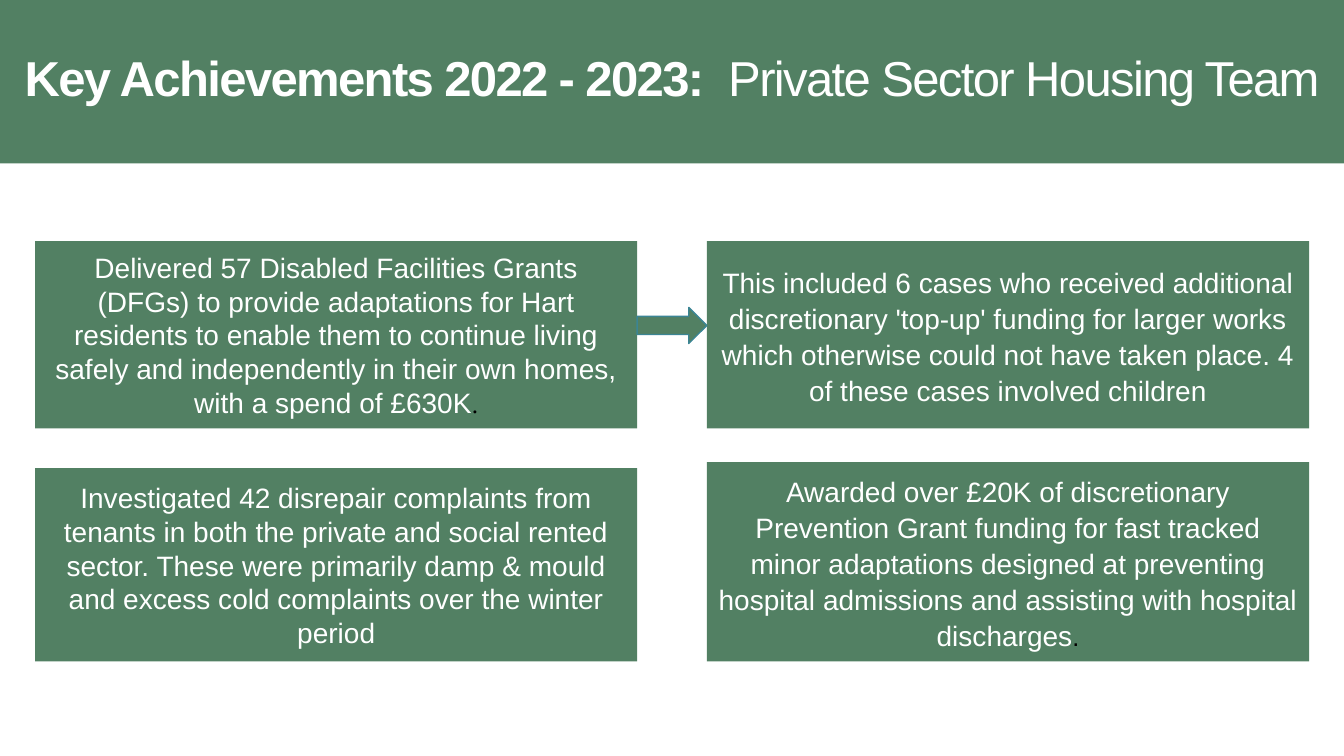
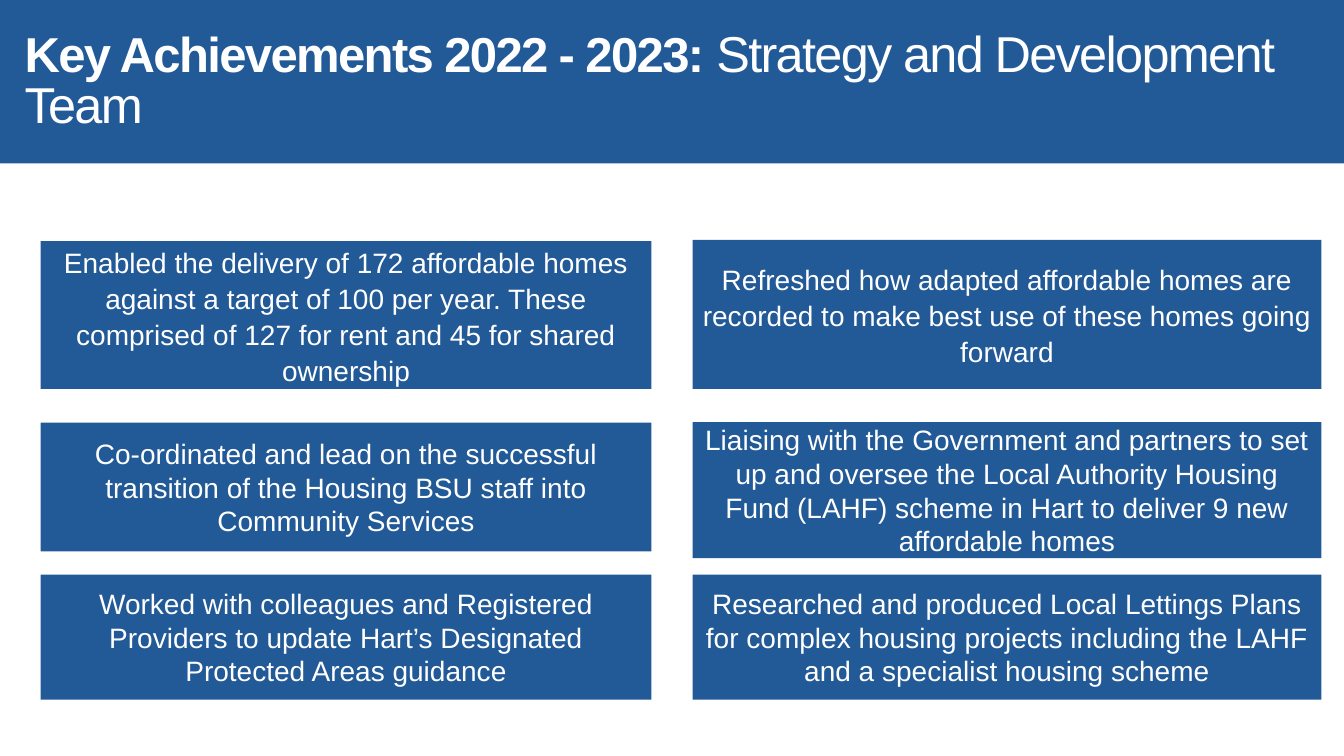
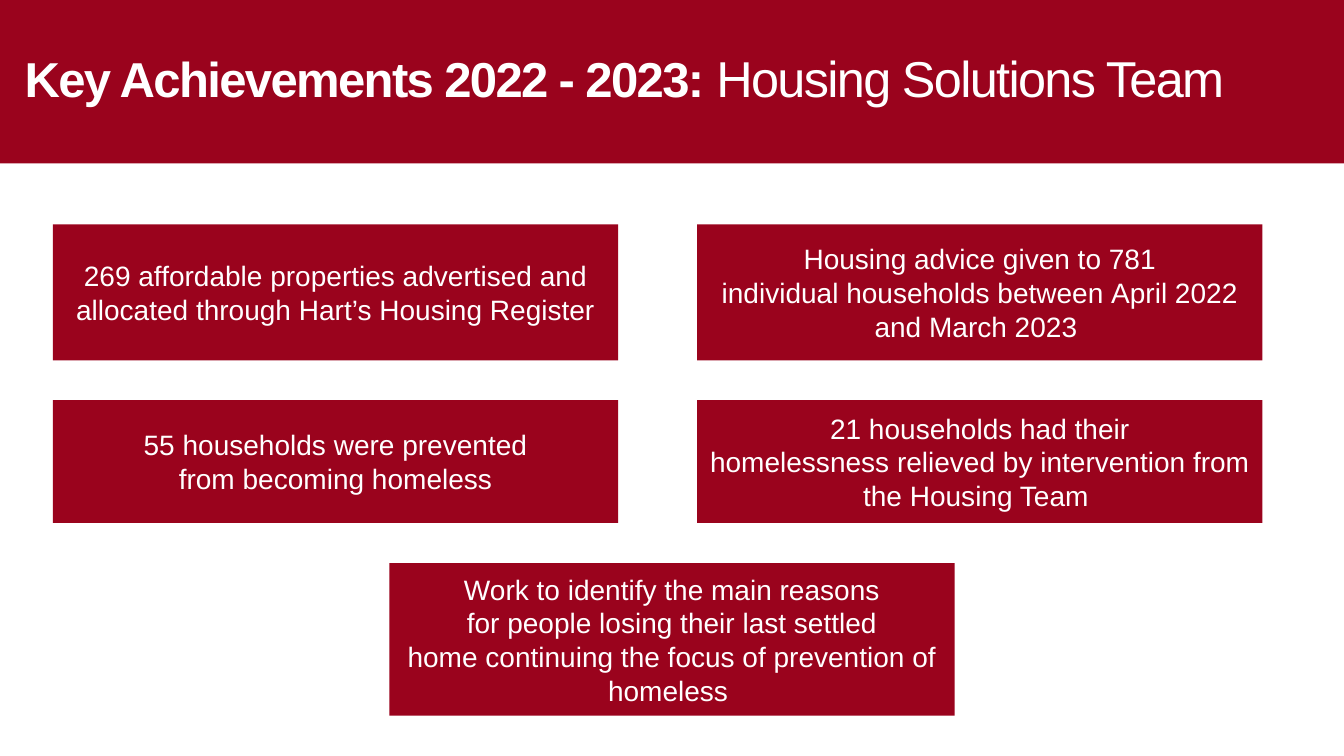
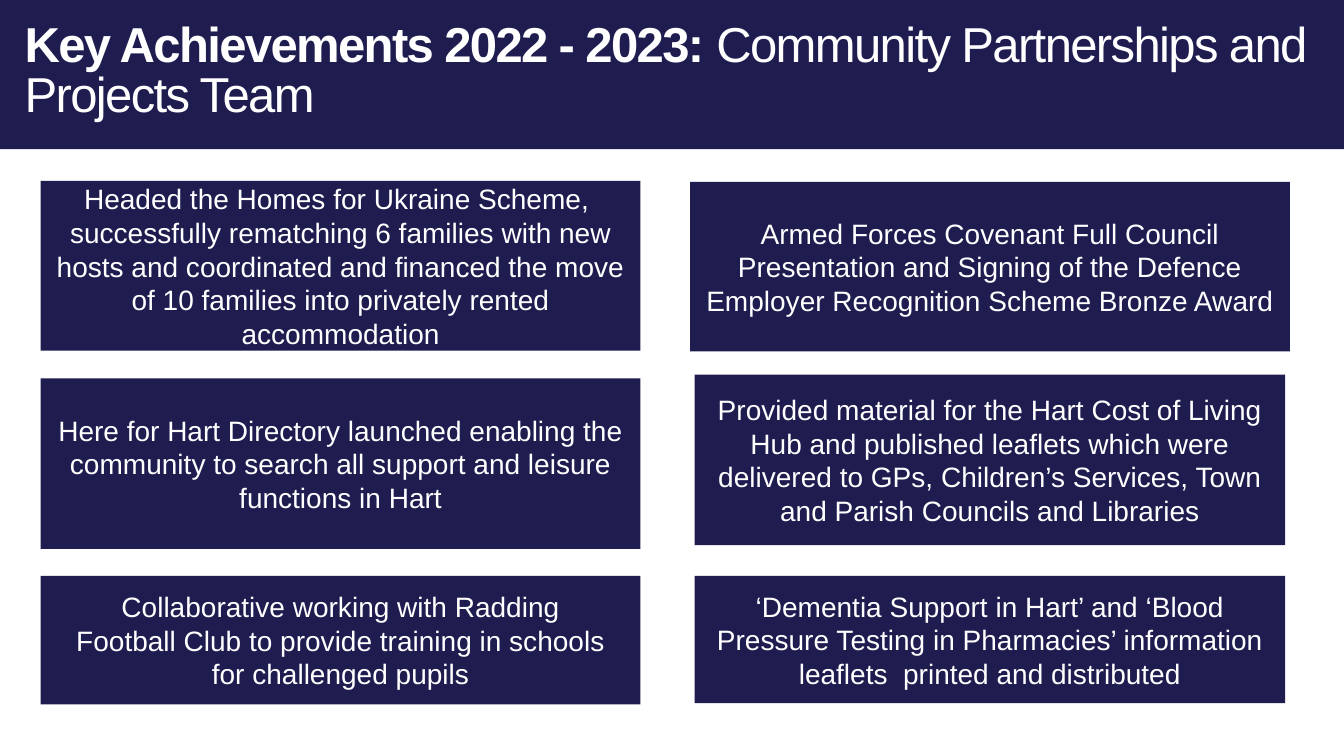
from dataclasses import dataclass

from pptx import Presentation
from pptx.dml.color import RGBColor
from pptx.enum.shapes import MSO_SHAPE
from pptx.enum.text import MSO_ANCHOR, PP_ALIGN
from pptx.util import Inches, Pt

RECTANGLE = MSO_SHAPE.RECTANGLE
RIGHT_ARROW = MSO_SHAPE.RIGHT_ARROW
MIDDLE = MSO_ANCHOR.MIDDLE
LEFT = PP_ALIGN.LEFT
CENTER = PP_ALIGN.CENTER

TIE = "~"
FIXED_SPACE = chr(160)


@dataclass(frozen=True)
class Theme:
    width: int = Inches(13.33)
    height: int = Inches(7.5)
    columns: int = 160
    rows: int = 90
    font: str = "Arial"
    serif: str = "Times New Roman"
    white: str = "FFFFFF"
    black: str = "000000"
    green: str = "528063"
    blue: str = "225997"
    red: str = "9A031D"
    navy: str = "1F1D50"
    teal: str = "3B8594"
    title_size: int = 35
    team_size: int = 36
    card_size: int = 20
    stop_size: int = 18
    title_tracking: int = -120
    title_leading: float = 0.85
    loose_leading: float = 1.07
    loose_after: int = 8


THEME = Theme()


@dataclass(frozen=True)
class Box:
    left: float
    top: float
    width: float
    height: float

    def place(self):
        column = THEME.width / THEME.columns
        row = THEME.height / THEME.rows
        return (round(self.left * column), round(self.top * row),
                round(self.width * column), round(self.height * row))


@dataclass(frozen=True)
class Card:
    top: float
    height: float
    text: str
    loose: bool = False
    stop_font: str = ""
    inset: float = 0.1


@dataclass(frozen=True)
class Column:
    left: float
    width: float
    cards: tuple


@dataclass(frozen=True)
class TeamSlide:
    color: str
    band_height: float
    title_height: float
    heading: str
    team: str
    team_size: int
    columns: tuple
    arrow: Box = None


HEADING = "Key Achievements 2022 - 2023: "

TEAM_SLIDES = (
    TeamSlide(
        THEME.green, 19.45, 17.3, HEADING + " ", "Private Sector Housing Team",
        THEME.title_size,
        (
            Column(4.2, 71.65, (
                Card(28.7, 22.3, "Delivered 57 Disabled Facilities Grants (DFGs) to provide "
                     "adaptations for Hart residents to enable them to continue living safely "
                     "and independently in their own homes, with a spend of £630K",
                     stop_font=THEME.serif),
                Card(55.75, 23, "Investigated 42 disrepair complaints from tenants in both the "
                     "private and social rented sector. These were primarily damp & mould and "
                     "excess cold complaints over the winter period"),
            )),
            Column(84.15, 71.7, (
                Card(28.7, 22.3, "This included 6 cases who received additional discretionary "
                     "'top-up' funding for larger works which otherwise could not have taken "
                     "place. 4 of these cases involved children", loose=True),
                Card(55, 23.75, "Awarded over £20K of discretionary Prevention Grant funding for "
                     "fast tracked minor adaptations designed at preventing hospital admissions "
                     "and assisting with hospital discharges", loose=True, stop_font=THEME.font),
            )),
        ),
        Box(75.85, 36.6, 8.3, 4.3),
    ),
    TeamSlide(
        THEME.blue, 19.45, 17.4, HEADING, "Strategy and Development Team", THEME.team_size,
        (
            Column(4.85, 72.7, (
                Card(28.7, 17.6, "Enabled the delivery of 172 affordable homes against a target "
                     "of 100 per year. These comprised of 127 for rent and 45 for shared "
                     "ownership", loose=True),
                Card(50.3, 15.35, "Co-ordinated and lead on the successful transition of the "
                     "Housing BSU staff into Community Services"),
                Card(68.4, 14.9, "Worked with colleagues and Registered Providers to update "
                     "Hart’s Designated Protected Areas guidance"),
            )),
            Column(82.45, 74.85, (
                Card(28.55, 17.75, "Refreshed how adapted affordable homes are recorded to make "
                     "best use of these homes going forward", loose=True),
                Card(50.25, 16.2, "Liaising with the Government and partners to set up and "
                     "oversee the Local Authority Housing Fund (LAHF) scheme in Hart to deliver "
                     "9 new affordable homes"),
                Card(68.4, 14.9, "Researched and produced Local Lettings Plans for complex "
                     "housing projects including the LAHF and a specialist housing scheme"),
            )),
        ),
    ),
    TeamSlide(
        THEME.red, 19.45, 17.4, HEADING, "Housing Solutions Team", THEME.team_size,
        (
            Column(6.3, 67.3, (
                Card(26.7, 16.2, "269 affordable~properties advertised~and allocated "
                     "through~Hart’s Housing~Register"),
                Card(47.65, 14.6, "55 households were~prevented from~becoming homeless"),
            )),
            Column(83, 67.3, (
                Card(26.7, 16.2, "Housing advice given~to 781 individual~households "
                     "between~April 2022 and March~2023~"),
                Card(47.65, 14.6, "21 households had~their homelessness~relieved "
                     "by~intervention from the~Housing Team~"),
            )),
            Column(46.35, 67.3, (
                Card(67.05, 18.15, "Work to identify the~main reasons for~people losing "
                     "their~last settled home~continuing the focus of prevention of "
                     "homeless~"),
            )),
        ),
    ),
    TeamSlide(
        THEME.navy, 17.75, 15.1, HEADING, "Community Partnerships and Projects Team",
        THEME.title_size,
        (
            Column(4.85, 71.4, (
                Card(21.55, 20.2, "Headed the Homes for Ukraine Scheme,  successfully "
                     "rematching 6 families with new hosts and coordinated and financed the "
                     "move of 10 families into privately rented accommodation"),
                Card(45.05, 20.3, "Here for Hart Directory launched enabling the community to "
                     "search all support and leisure functions in Hart"),
                Card(68.55, 15.3, "Collaborative working with Radding Football Club to provide "
                     "training in schools for challenged pupils", inset=0.34),
            )),
            Column(82.15, 71.4, (
                Card(21.65, 20.2, "Armed Forces Covenant Full Council Presentation and Signing "
                     "of the Defence Employer Recognition Scheme Bronze Award"),
            )),
            Column(82.7, 70.3, (
                Card(44.6, 20.3, "Provided material for the Hart Cost of Living Hub and "
                     "published leaflets which were delivered to GPs, Children’s Services, Town "
                     "and Parish Councils and Libraries"),
                Card(68.55, 15.15, "‘Dementia Support in Hart’ and ‘Blood Pressure Testing in "
                     "Pharmacies’ information leaflets  printed and distributed"),
            )),
        ),
    ),
)


def add_block(slide, box, color, preset=RECTANGLE, outline=None):
    block = slide.shapes.add_shape(preset, *box.place())
    block.shadow.inherit = False
    block.fill.solid()
    block.fill.fore_color.rgb = RGBColor.from_string(color)
    if outline:
        block.line.color.rgb = RGBColor.from_string(outline)
        block.line.width = Pt(1)
    else:
        block.line.fill.background()
    return block


def start_paragraph(frame, alignment):
    frame.word_wrap = True
    frame.vertical_anchor = MIDDLE
    paragraph = frame.paragraphs[0]
    paragraph.alignment = alignment
    return paragraph


def add_run(paragraph, text, size, color=THEME.white, font=THEME.font, bold=False):
    run = paragraph.add_run()
    run.text = text.replace(TIE, FIXED_SPACE)
    run.font.name = font
    run.font.size = Pt(size)
    run.font.bold = bold
    run.font.color.rgb = RGBColor.from_string(color)
    return run


def add_title_band(slide, box, team_slide):
    add_block(slide, box, team_slide.color)
    title_box = Box(box.left + 1.75, box.top + 1.1, box.width - 2.8, team_slide.title_height)
    title = slide.shapes.add_textbox(*title_box.place())
    paragraph = start_paragraph(title.text_frame, LEFT)
    paragraph.line_spacing = THEME.title_leading
    runs = (
        add_run(paragraph, team_slide.heading, THEME.title_size, bold=True),
        add_run(paragraph, team_slide.team, team_slide.team_size),
    )
    for run in runs:
        run._r.get_or_add_rPr().set("spc", str(THEME.title_tracking))


def add_card(slide, box, card, color):
    frame = add_block(slide, box, color).text_frame
    frame.margin_left = frame.margin_right = Inches(card.inset)
    paragraph = start_paragraph(frame, CENTER)
    if card.loose:
        paragraph.line_spacing = THEME.loose_leading
        paragraph.space_after = Pt(THEME.loose_after)
    add_run(paragraph, card.text, THEME.card_size)
    if card.stop_font:
        add_run(paragraph, ".", THEME.stop_size, THEME.black, card.stop_font)


def add_team_slide(presentation, team_slide):
    slide = presentation.slides.add_slide(presentation.slide_layouts[6])
    add_title_band(slide, Box(0, 0, THEME.columns, team_slide.band_height), team_slide)
    for column in team_slide.columns:
        for card in column.cards:
            box = Box(column.left, card.top, column.width, card.height)
            add_card(slide, box, card, team_slide.color)
    if team_slide.arrow:
        add_block(slide, team_slide.arrow, team_slide.color, RIGHT_ARROW, THEME.teal)


def main():
    presentation = Presentation()
    presentation.slide_width = THEME.width
    presentation.slide_height = THEME.height
    for team_slide in TEAM_SLIDES:
        add_team_slide(presentation, team_slide)
    presentation.save("out.pptx")


if __name__ == "__main__":
    main()
